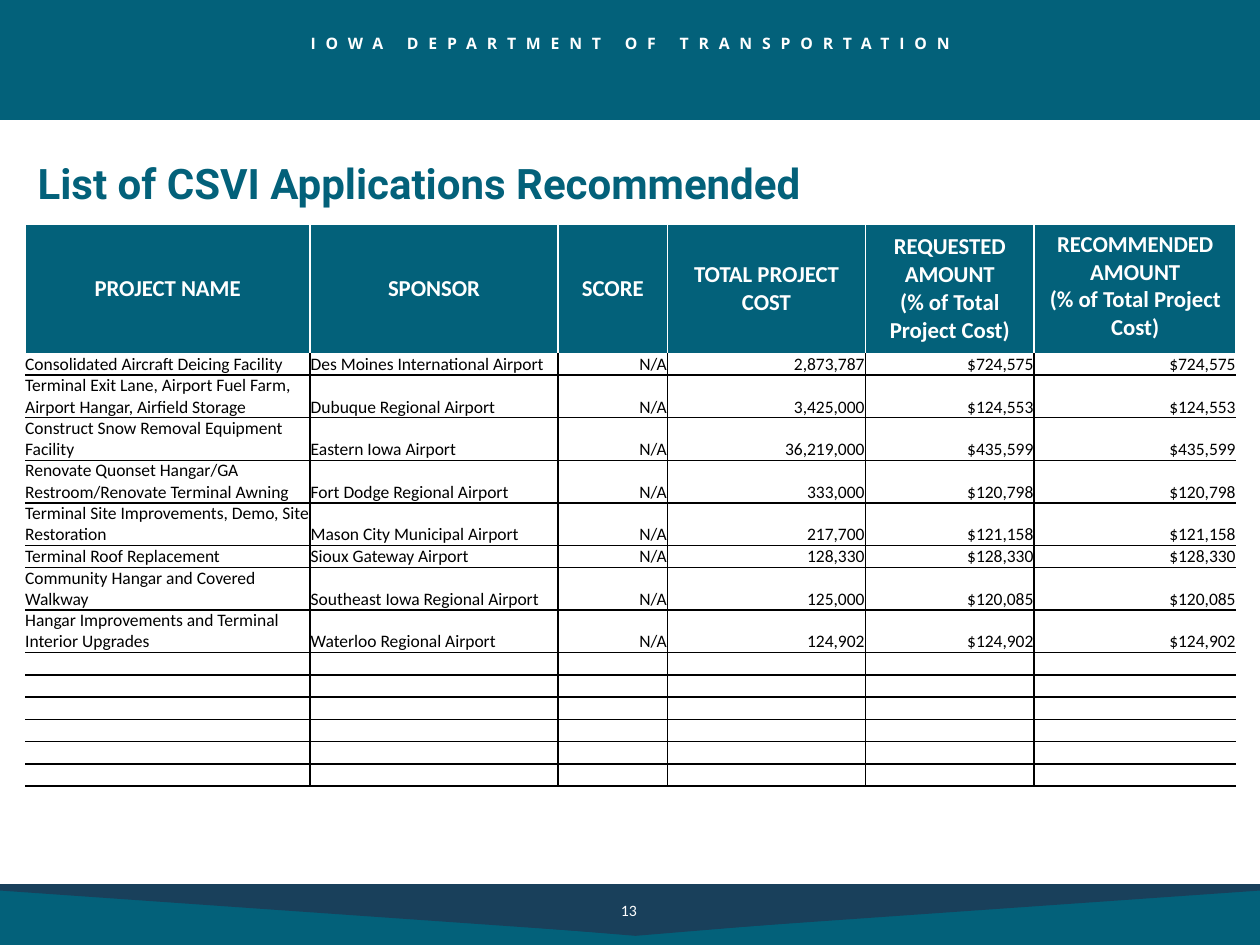
from lxml.etree import SubElement
from pptx import Presentation
from pptx.dml.color import RGBColor
from pptx.enum.shapes import MSO_SHAPE as Shape
from pptx.enum.text import MSO_ANCHOR as Anchor, PP_ALIGN as Align
from pptx.oxml.ns import qn
from pptx.util import Pt

TEAL = RGBColor(0x03, 0x61, 0x7A)
NAVY = RGBColor(0x19, 0x40, 0x5B)
WHITE = RGBColor(0xFF, 0xFF, 0xFF)
BLACK = RGBColor(0x00, 0x00, 0x00)

BANNER_FONT = {"name": "Open Sans", "size": Pt(9), "bold": True}
TITLE_FONT = {"name": "Roboto", "size": Pt(24), "bold": True}
NUMBER_FONT = {"name": "Calibri", "size": Pt(9)}
HEADER_FONT = {"name": "Calibri", "size": Pt(13), "bold": True}
BODY_FONT = {"name": "Calibri", "size": Pt(10), "bold": False}

COLUMN_WIDTHS = [162.7, 141.8, 62.6, 113, 96.5, 115.5]
HEADER_HEIGHT, LINE_HEIGHT, TWO_LINE_HEIGHT = 73.4, 12.75, 24.3
EMPTY_ROWS = 6
HEADERS = [
    "PROJECT NAME",
    "SPONSOR",
    "SCORE",
    "TOTAL PROJECT COST",
    "REQUESTED AMOUNT\n(% of Total Project Cost)",
    "RECOMMENDED AMOUNT\n(% of Total Project Cost)",
]
# Project, sponsor, total cost, amount (requested and recommended), lines
PROJECTS = [
    ("Consolidated Aircraft Deicing Facility",
     "Des Moines International Airport", "2,873,787", "$724,575", 1),
    ("Terminal Exit Lane, Airport Fuel Farm, Airport Hangar, Airfield Storage",
     "Dubuque Regional Airport", "3,425,000", "$124,553", 2),
    ("Construct Snow Removal Equipment Facility",
     "Eastern Iowa Airport", "36,219,000", "$435,599", 2),
    ("Renovate Quonset Hangar/GA Restroom/Renovate Terminal Awning",
     "Fort Dodge Regional Airport", "333,000", "$120,798", 2),
    ("Terminal Site Improvements, Demo, Site Restoration",
     "Mason City Municipal Airport", "217,700", "$121,158", 2),
    ("Terminal Roof Replacement",
     "Sioux Gateway Airport", "128,330", "$128,330", 1),
    ("Community Hangar and Covered Walkway",
     "Southeast Iowa Regional Airport", "125,000", "$120,085", 2),
    ("Hangar Improvements and Terminal Interior Upgrades",
     "Waterloo Regional Airport", "124,902", "$124,902", 2),
]


def set_values(target, values):
    for name, value in values.items():
        setattr(target, name, value)


def write_text(frame, text, font, color, align=Align.LEFT):
    frame.word_wrap = True
    frame.text = text
    for paragraph in frame.paragraphs:
        paragraph.alignment = align
        for run in paragraph.runs:
            set_values(run.font, font)
            run.font.color.rgb = color


def paint(shape, color):
    shape.shadow.inherit = False
    shape.fill.solid()
    shape.fill.fore_color.rgb = color
    shape.line.fill.background()


def add_band(slide, box):
    band = slide.shapes.add_shape(Shape.RECTANGLE, *map(Pt, box))
    paint(band, TEAL)


def add_chevron(slide, box):
    left, top, width, height = box
    right, shoulder = left + width, top + 3.6
    builder = slide.shapes.build_freeform(Pt(left), Pt(top))
    outline = [(right, top), (right, shoulder),
               (left + width / 2, top + height), (left, shoulder)]
    builder.add_line_segments([(Pt(x), Pt(y)) for x, y in outline])
    chevron = builder.convert_to_shape()
    paint(chevron, NAVY)
    return chevron


def add_banner(slide, box):
    left, top, width, height = box
    add_band(slide, box)
    label = slide.shapes.add_textbox(Pt(left), Pt(top + 15.8), Pt(width), Pt(18))
    write_text(label.text_frame, "IOWA DEPARTMENT OF TRANSPORTATION",
               BANNER_FONT, WHITE, Align.CENTER)
    run = label.text_frame.paragraphs[0].runs[0]
    run.font._element.set("spc", "560")


def add_footer(slide, box):
    left, top, width, height = box
    add_band(slide, box)
    add_chevron(slide, (left, top, width, 28.8))
    # The inner chevron carries the page number
    chevron = add_chevron(slide, (left + 59.8, top + 0.7, 606.6, 28.8))
    frame = chevron.text_frame
    write_text(frame, "13", NUMBER_FONT, WHITE)
    set_values(frame, {"margin_left": Pt(295), "vertical_anchor": Anchor.MIDDLE})


def add_title(slide, box):
    title = slide.shapes.add_textbox(*map(Pt, box))
    frame = title.text_frame
    write_text(frame, "List of CSVI Applications Recommended", TITLE_FONT, TEAL)
    frame.vertical_anchor = Anchor.MIDDLE
    frame.paragraphs[0].line_spacing = 0.9


def set_borders(cell, colors):
    """Draw the sides named in colors and clear the others."""
    properties = cell._tc.get_or_add_tcPr()
    for side in "LRTB":
        line = SubElement(properties, qn(f"a:ln{side}"), w=str(Pt(1)))
        if side in colors:
            fill = SubElement(line, qn("a:solidFill"))
            SubElement(fill, qn("a:srgbClr"), val=str(colors[side]))
        else:
            SubElement(line, qn("a:noFill"))


def format_header_cell(cell, text, is_last):
    set_borders(cell, dict.fromkeys("LRT", WHITE))
    cell.fill.solid()
    cell.fill.fore_color.rgb = TEAL
    write_text(cell.text_frame, text, HEADER_FONT, WHITE, Align.CENTER)
    cell.vertical_anchor = Anchor.TOP if is_last else Anchor.MIDDLE


def format_body_cell(cell, text, column, is_first_row):
    sides = "B" if is_first_row else "TB"
    sides += "L" if column > 0 else ""
    sides += "R" if column < len(COLUMN_WIDTHS) - 1 else ""
    set_borders(cell, dict.fromkeys(sides, BLACK))
    cell.fill.background()
    margin = Pt(0.5) if column else Pt(0)
    set_values(cell, {"margin_left": margin, "margin_right": margin,
                      "margin_top": Pt(0), "margin_bottom": Pt(0),
                      "vertical_anchor": Anchor.BOTTOM})
    if text:
        align = Align.RIGHT if column >= 2 else Align.LEFT
        write_text(cell.text_frame, text, BODY_FONT, BLACK, align)
    else:
        # Small type keeps the empty rows low
        paragraph = cell.text_frame.paragraphs[0]
        SubElement(paragraph._p, qn("a:endParaRPr"), sz="1000")


def add_applications_table(slide, box):
    body = [(name, sponsor, "N/A", cost, amount, amount)
            for name, sponsor, cost, amount, _ in PROJECTS]
    body += [("",) * len(HEADERS)] * EMPTY_ROWS
    heights = [HEADER_HEIGHT]
    heights += [LINE_HEIGHT if project[-1] == 1 else TWO_LINE_HEIGHT
                for project in PROJECTS]
    heights += [LINE_HEIGHT] * EMPTY_ROWS

    table = slide.shapes.add_table(len(heights), len(HEADERS), *map(Pt, box)).table
    table.horz_banding = False
    for column, width in zip(table.columns, COLUMN_WIDTHS):
        column.width = Pt(width)
    for row, height in zip(table.rows, heights):
        row.height = Pt(height)
    for column, text in enumerate(HEADERS):
        format_header_cell(table.cell(0, column), text, column == len(HEADERS) - 1)
    for row, texts in enumerate(body, start=1):
        for column, text in enumerate(texts):
            format_body_cell(table.cell(row, column), text, column, row == 1)


def main():
    presentation = Presentation()
    presentation.slide_width, presentation.slide_height = Pt(720), Pt(540)
    slide = presentation.slides.add_slide(presentation.slide_layouts[6])
    add_banner(slide, (0, 0, 720, 68.6))
    add_footer(slide, (0, 505.3, 720, 34.7))
    add_title(slide, (14.4, 92, 620.6, 28))
    add_applications_table(slide, (14.4, 128.3, 692.1, 321.2))
    presentation.save("out.pptx")


if __name__ == "__main__":
    main()
